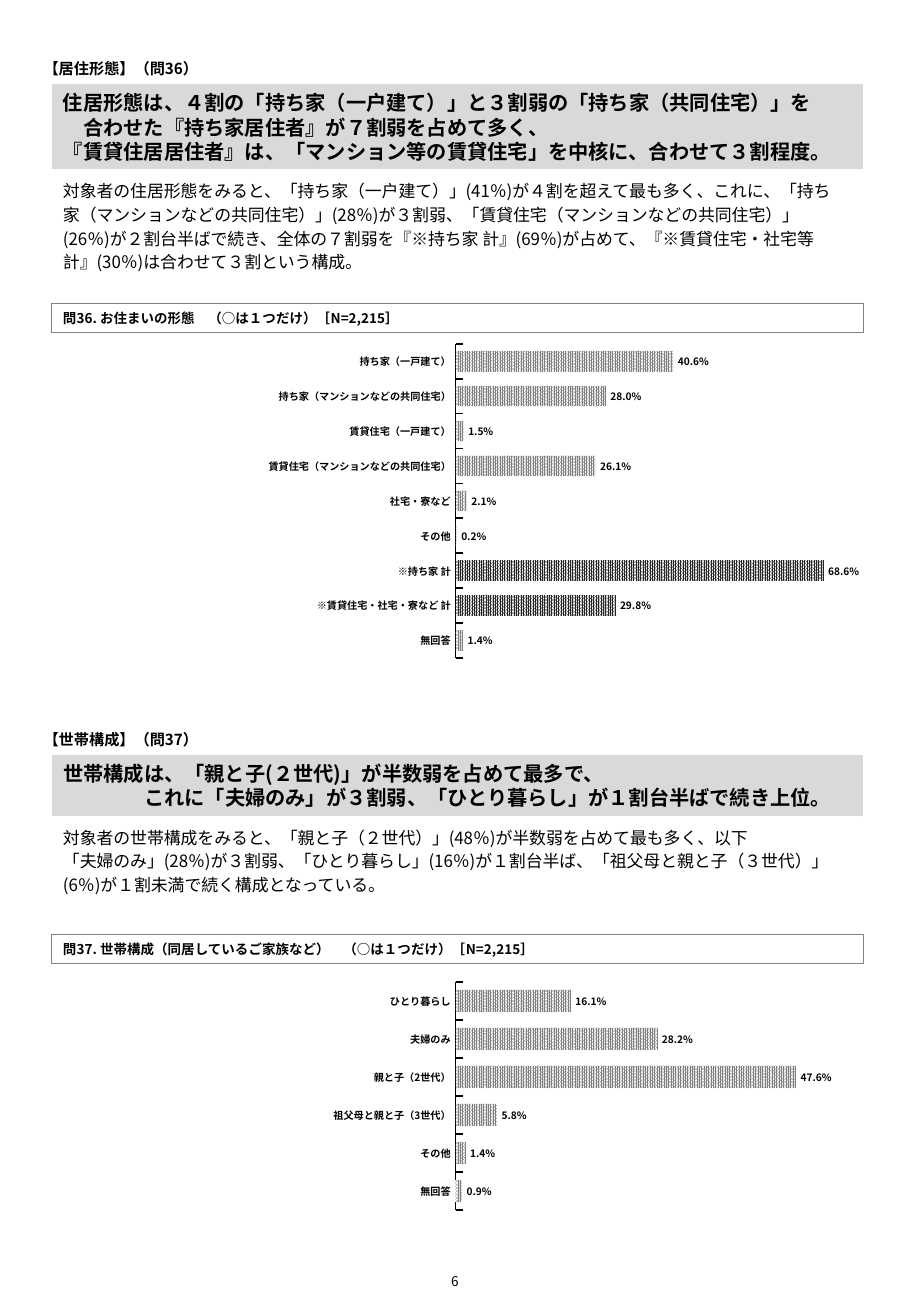
import pptx
import pptx.chart.data
import pptx.dml.color
import pptx.enum.chart
import pptx.enum.dml
import pptx.enum.shapes
import pptx.enum.text
import pptx.oxml
import pptx.util

PX = 9144  # EMU per px, 100 px to the inch
FONT = "Noto Sans CJK JP"
COLORS = {"text": "000000", "band": "D9D9D9", "paper": "FFFFFF",
          "frame": "808080", "bar": "808080", "total": "262626"}
LEFT, WIDTH = 42, 669
LABEL_H, QUESTION_H = 25, 24

HOUSING = {
    "label": "【居住形態】（問36）",
    "heading": [("住居形態は、４割の「持ち家（一戸建て）」と３割弱の「持ち家（共同住宅）」を", 0),
                ("合わせた『持ち家居住者』が７割弱を占めて多く、", 1),
                ("『賃貸住居居住者』は、「マンション等の賃貸住宅」を中核に、合わせて３割程度。", 0)],
    "heading_h": 71,
    "body": ["対象者の住居形態をみると、「持ち家（一戸建て）」(41％)が４割を超えて最も多く、これに、「持ち",
             "家（マンションなどの共同住宅）」(28％)が３割弱、「賃貸住宅（マンションなどの共同住宅）」",
             "(26％)が２割台半ばで続き、全体の７割弱を『※持ち家 計』(69％)が占めて、『※賃貸住宅・社宅等",
             "計』(30％)は合わせて３割という構成。"],
    "body_h": 85,
    "question": "問36. お住まいの形態　（○は１つだけ）［N=2,215］",
    "chart_gap": -2,
    "chart_h": 275,
    "axis_max": 0.8,
    "shares": {"持ち家（一戸建て）": 0.406, "持ち家（マンションなどの共同住宅）": 0.28,
               "賃貸住宅（一戸建て）": 0.015, "賃貸住宅（マンションなどの共同住宅）": 0.261,
               "社宅・寮など": 0.021, "その他": 0.002, "※持ち家 計": 0.686,
               "※賃貸住宅・社宅・寮など 計": 0.298, "無回答": 0.014},
}
HOUSEHOLD = {
    "label": "【世帯構成】（問37）",
    "heading": [("世帯構成は、「親と子(２世代)」が半数弱を占めて最多で、", 0),
                ("これに「夫婦のみ」が３割弱、「ひとり暮らし」が１割台半ばで続き上位。", 4)],
    "heading_h": 51,
    "body": ["対象者の世帯構成をみると、「親と子（２世代）」(48％)が半数弱を占めて最も多く、以下",
             "「夫婦のみ」(28％)が３割弱、「ひとり暮らし」(16％)が１割台半ば、「祖父母と親と子（３世代）」",
             "(6％)が１割未満で続く構成となっている。"],
    "body_h": 72,
    "question": "問37. 世帯構成（同居しているご家族など）　（○は１つだけ）［N=2,215］",
    "chart_gap": 7,
    "chart_h": 200,
    "axis_max": 0.6,
    "shares": {"ひとり暮らし": 0.161, "夫婦のみ": 0.282, "親と子（2世代）": 0.476,
               "祖父母と親と子（3世代）": 0.058, "その他": 0.014, "無回答": 0.009},
}


def rgb(name):
    return pptx.dml.color.RGBColor.from_string(COLORS[name])


def emu(*lengths):
    return [length * PX for length in lengths]


def write(shape, lines, size, bold=False, align="LEFT", anchor="MIDDLE", before=0):
    """Fill a shape with (text, indent in characters) lines, one paragraph each."""
    frame = shape.text_frame
    frame_format = {"word_wrap": True, "auto_size": pptx.enum.text.MSO_AUTO_SIZE.NONE,
                    "vertical_anchor": pptx.enum.text.MSO_ANCHOR[anchor],
                    "margin_left": 10 * PX, "margin_right": 10 * PX,
                    "margin_top": 5 * PX, "margin_bottom": 5 * PX}
    for name, value in frame_format.items():
        setattr(frame, name, value)
    for number, (text, indent) in enumerate(lines):
        paragraph = frame.add_paragraph() if number else frame.paragraphs[0]
        paragraph.alignment = pptx.enum.text.PP_ALIGN[align]
        paragraph.space_before = pptx.util.Pt(before)
        if indent:
            margin = pptx.util.Pt(indent * size)
            paragraph._p.get_or_add_pPr().set("marL", str(margin))
        run = paragraph.add_run()
        run.text = text
        for name, value in {"size": pptx.util.Pt(size), "bold": bold, "name": FONT}.items():
            setattr(run.font, name, value)
        run.font.color.rgb = rgb("text")
        east_asian = pptx.oxml.parse_xml(
            '<a:ea xmlns:a="http://schemas.openxmlformats.org/drawingml/2006/main" '
            f'typeface="{FONT}"/>')
        run.font._element.find(pptx.oxml.ns.qn("a:latin")).addnext(east_asian)


def add_text(slide, box, lines, size, **text_format):
    write(slide.shapes.add_textbox(*emu(*box)), lines, size, **text_format)


def add_rectangle(slide, box):
    rectangle = slide.shapes.add_shape(pptx.enum.shapes.MSO_SHAPE.RECTANGLE, *emu(*box))
    rectangle.shadow.inherit = False
    return rectangle


def style_heading(heading, box, lines):
    heading.left, heading.top, heading.width, heading.height = emu(*box)
    heading.fill.solid()
    heading.fill.fore_color.rgb = rgb("band")
    heading.line.color.rgb = rgb("paper")
    heading.line.width = pptx.util.Pt(0.75)
    write(heading, lines, 12, bold=True)


def add_question(slide, box, question):
    frame = add_rectangle(slide, box)
    frame.fill.background()
    frame.line.color.rgb = rgb("frame")
    frame.line.width = pptx.util.Pt(0.5)
    write(frame, [(question, 0)], 8, bold=True)


def hatch(fill, color):
    fill.patterned()
    fill.pattern = pptx.enum.dml.MSO_PATTERN.PERCENT_90
    fill.fore_color.rgb = rgb(color)
    fill.back_color.rgb = rgb("paper")


def add_share_chart(slide, box, shares, axis_max):
    chart_data = pptx.chart.data.CategoryChartData(number_format="0.0%")
    chart_data.categories = list(shares)
    chart_data.add_series("Series 1", list(shares.values()))
    chart = slide.shapes.add_chart(
        pptx.enum.chart.XL_CHART_TYPE.BAR_CLUSTERED, *emu(*box), chart_data).chart
    chart.has_legend = chart.has_title = False
    for name, value in {"size": pptx.util.Pt(6), "bold": True, "name": FONT}.items():
        setattr(chart.font, name, value)
    chart.font.color.rgb = rgb("text")

    tick = pptx.enum.chart.XL_TICK_MARK
    axis_formats = {
        chart.category_axis: {"reverse_order": True, "has_major_gridlines": False,
                              "major_tick_mark": tick.INSIDE, "minor_tick_mark": tick.NONE},
        chart.value_axis: {"minimum_scale": 0, "maximum_scale": axis_max,
                           "has_major_gridlines": False,
                           "major_tick_mark": tick.NONE, "minor_tick_mark": tick.NONE,
                           "tick_label_position": pptx.enum.chart.XL_TICK_LABEL_POSITION.NONE},
    }
    for axis, axis_format in axis_formats.items():
        for name, value in axis_format.items():
            setattr(axis, name, value)
    chart.category_axis.format.line.color.rgb = rgb("text")
    chart.category_axis.format.line.width = pptx.util.Pt(1)
    chart.value_axis.format.line.fill.background()

    plot = chart.plots[0]
    plot.gap_width, plot.vary_by_categories, plot.has_data_labels = 70, False, True
    labels_format = {"show_value": True, "number_format": "0.0%",
                     "number_format_is_linked": False,
                     "position": pptx.enum.chart.XL_LABEL_POSITION.OUTSIDE_END}
    for name, value in labels_format.items():
        setattr(plot.data_labels, name, value)
    bars = plot.series[0]
    hatch(bars.format.fill, "bar")
    for number, category in enumerate(shares):
        if category.startswith("※"):
            hatch(bars.points[number].format.fill, "total")
    place_plot(chart, x=0.5, y=0.04, w=0.48, h=0.94)


def place_plot(chart, **fractions):
    """Fix the inner plot area as fractions of the chart."""
    plot_area = chart._chartSpace.chart.plotArea
    for layout in plot_area.findall(pptx.oxml.ns.qn("c:layout")):
        plot_area.remove(layout)
    modes = "".join(f'<c:{side}Mode val="edge"/>' for side in "xy")
    sizes = "".join(f'<c:{side} val="{value}"/>' for side, value in fractions.items())
    plot_area.insert(0, pptx.oxml.parse_xml(
        '<c:layout xmlns:c="http://schemas.openxmlformats.org/drawingml/2006/chart">'
        f'<c:manualLayout><c:layoutTarget val="inner"/>{modes}{sizes}'
        '</c:manualLayout></c:layout>'))


def add_section(slide, top, section, heading):
    """Stack label, heading, body, question and chart downwards from top."""
    heading_top = top + LABEL_H
    body_top = heading_top + section["heading_h"] + 4
    question_top = body_top + section["body_h"] + 21
    chart_top = question_top + QUESTION_H + section["chart_gap"]

    add_text(slide, (LEFT - 16, top, 591, LABEL_H), [(section["label"], 0)], 9, bold=True)
    style_heading(heading, (LEFT, heading_top, WIDTH, section["heading_h"]), section["heading"])
    add_text(slide, (LEFT, body_top, WIDTH, section["body_h"]),
             [(line, 0) for line in section["body"]], 10, anchor="TOP", before=2)
    add_question(slide, (LEFT, question_top, WIDTH, QUESTION_H), section["question"])
    add_share_chart(slide, (7, chart_top, 736, section["chart_h"]),
                    section["shares"], section["axis_max"])


def main():
    deck = pptx.Presentation()
    deck.slide_width, deck.slide_height = emu(750, 1083)
    slide = deck.slides.add_slide(deck.slide_layouts[5])
    add_section(slide, 44, HOUSING, add_rectangle(slide, (LEFT, 69, WIDTH, 71)))
    add_section(slide, 596, HOUSEHOLD, slide.shapes.title)
    add_text(slide, (287, 1025, 175, 58), [("6", 0)], 8, align="CENTER")
    deck.save("out.pptx")


if __name__ == "__main__":
    main()
